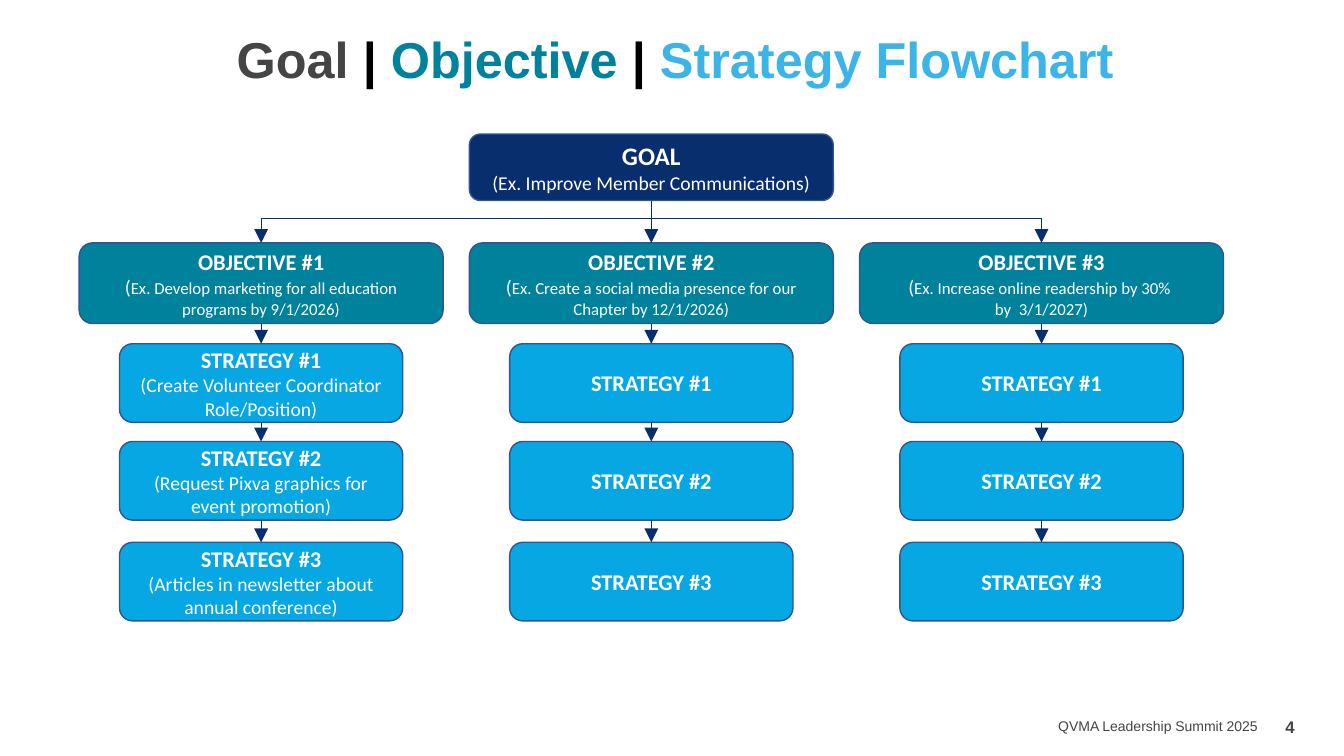
"""Build a flowchart slide that runs from a goal to objectives to strategies."""
from lxml.etree import SubElement
from pptx import Presentation
from pptx.dml.color import RGBColor
from pptx.enum.shapes import MSO_CONNECTOR, MSO_SHAPE
from pptx.enum.text import MSO_ANCHOR, PP_ALIGN
from pptx.oxml.ns import qn
from pptx.util import Inches, Pt

WHITE = RGBColor(0xFF, 0xFF, 0xFF)
BLACK = RGBColor(0x00, 0x00, 0x00)
GRAY = RGBColor(0x44, 0x45, 0x45)
NAVY = RGBColor(0x08, 0x2E, 0x6E)
TEAL = RGBColor(0x00, 0x82, 0x9C)
SKY = RGBColor(0x3C, 0xB4, 0xE7)
BLUE = RGBColor(0x06, 0xA7, 0xE2)
EDGE = RGBColor(0x32, 0x54, 0x91)

MIDS = [2.59 + 3.87 * col for col in range(3)]
ROWS = [3.41, 4.38, 5.38]
WIDE, SLIM = 3.61, 2.81
GOAL_TOP, GOAL_TALL = 1.33, 0.66
AIM_TOP, AIM_TALL = 2.41, 0.8
STEP_TALL = 0.78
BAR = 2.17


def write(par, text, size=14, bold=False, color=WHITE, face="Calibri"):
    """Add one formatted run to a paragraph."""
    run = par.add_run()
    run.text = text
    run.font.size = Pt(size)
    run.font.bold = bold
    run.font.name = face
    run.font.color.rgb = color


deck = Presentation()
deck.slide_width, deck.slide_height = Inches(13.33), Inches(7.5)
slide = deck.slides.add_slide(deck.slide_layouts[6])
shapes = slide.shapes

title = [("Goal ", GRAY), ("| ", BLACK), ("Objective ", TEAL),
         ("| ", BLACK), ("Strategy Flowchart", SKY)]
labels = [
    (2.25, 0.3, 11, 0.91, PP_ALIGN.LEFT, 0.9, 36, True, title),
    (5.27, 7.07, 7.3, 0.27, PP_ALIGN.RIGHT, 1.0, 10, False,
     [("QVMA Leadership Summit 2025", GRAY)]),
    (12.65, 7.06, 0.45, 0.3, PP_ALIGN.LEFT, 1.0, 12, True, [("4", GRAY)]),
]
for left, top, width, tall, align, space, size, bold, parts in labels:
    frame = shapes.add_textbox(
        Inches(left), Inches(top), Inches(width), Inches(tall)).text_frame
    frame.word_wrap = True
    par = frame.paragraphs[0]
    par.alignment = align
    par.line_spacing = space
    for text, color in parts:
        write(par, text, size=size, bold=bold, color=color, face="Arial")

aims = [
    ["Ex. Develop marketing for all education programs by 9/1/2026)"],
    ["Ex. Create a social media presence for our Chapter by 12/1/2026)"],
    ["Ex. Increase online readership by 30% ", "by  3/1/2027)"],
]
steps = [
    ["(Create Volunteer Coordinator Role/Position)",
     "(Request Pixva graphics for event promotion)",
     "(Articles in newsletter about annual conference)"],
    [], [],
]

boxes = [(MIDS[1], GOAL_TOP, WIDE, GOAL_TALL, NAVY,
          [[("GOAL", 18, True)],
           [("(Ex. Improve Member Communications)", 14, False)]])]
lines = [(MIDS[0], BAR, MIDS[2], BAR, False)]
for col, mid in enumerate(MIDS):
    rows = [[(f"OBJECTIVE #{col + 1}", 16, True)]]
    rows += [[(text, 12, False)] for text in aims[col]]
    rows[1].insert(0, ("(", 14, False))
    boxes.append((mid, AIM_TOP, WIDE, AIM_TALL, TEAL, rows))
    start = GOAL_TOP + GOAL_TALL if col == 1 else BAR
    lines.append((mid, start, mid, AIM_TOP, True))
    above = AIM_TOP + AIM_TALL
    for num, top in enumerate(ROWS):
        rows = [[(f"STRATEGY #{num + 1}", 16, True)]]
        rows += [[(text, 14, False)] for text in steps[col][num:num + 1]]
        boxes.append((mid, top, SLIM, STEP_TALL, BLUE, rows))
        lines.append((mid, above, mid, top, True))
        above = top + STEP_TALL

for mid, top, width, tall, fill, rows in boxes:
    box = shapes.add_shape(
        MSO_SHAPE.ROUNDED_RECTANGLE, Inches(mid - width / 2), Inches(top),
        Inches(width), Inches(tall))
    box.shadow.inherit = False
    box.fill.solid()
    box.fill.fore_color.rgb = fill
    box.line.color.rgb = EDGE
    box.line.width = Pt(1)
    frame = box.text_frame
    frame.word_wrap = True
    frame.vertical_anchor = MSO_ANCHOR.MIDDLE
    for num, row in enumerate(rows):
        par = frame.add_paragraph() if num else frame.paragraphs[0]
        par.alignment = PP_ALIGN.CENTER
        for text, size, bold in row:
            write(par, text, size=size, bold=bold)

for left, top, right, base, arrow in lines:
    link = shapes.add_connector(
        MSO_CONNECTOR.STRAIGHT, Inches(left), Inches(top),
        Inches(right), Inches(base))
    link.line.color.rgb = NAVY
    link.line.width = Pt(0.5)
    if arrow:
        SubElement(link.line._get_or_add_ln(), qn("a:tailEnd"),
                   type="triangle", w="lg", len="lg")
    SubElement(link._element.spPr, qn("a:effectLst"))

deck.save("out.pptx")
